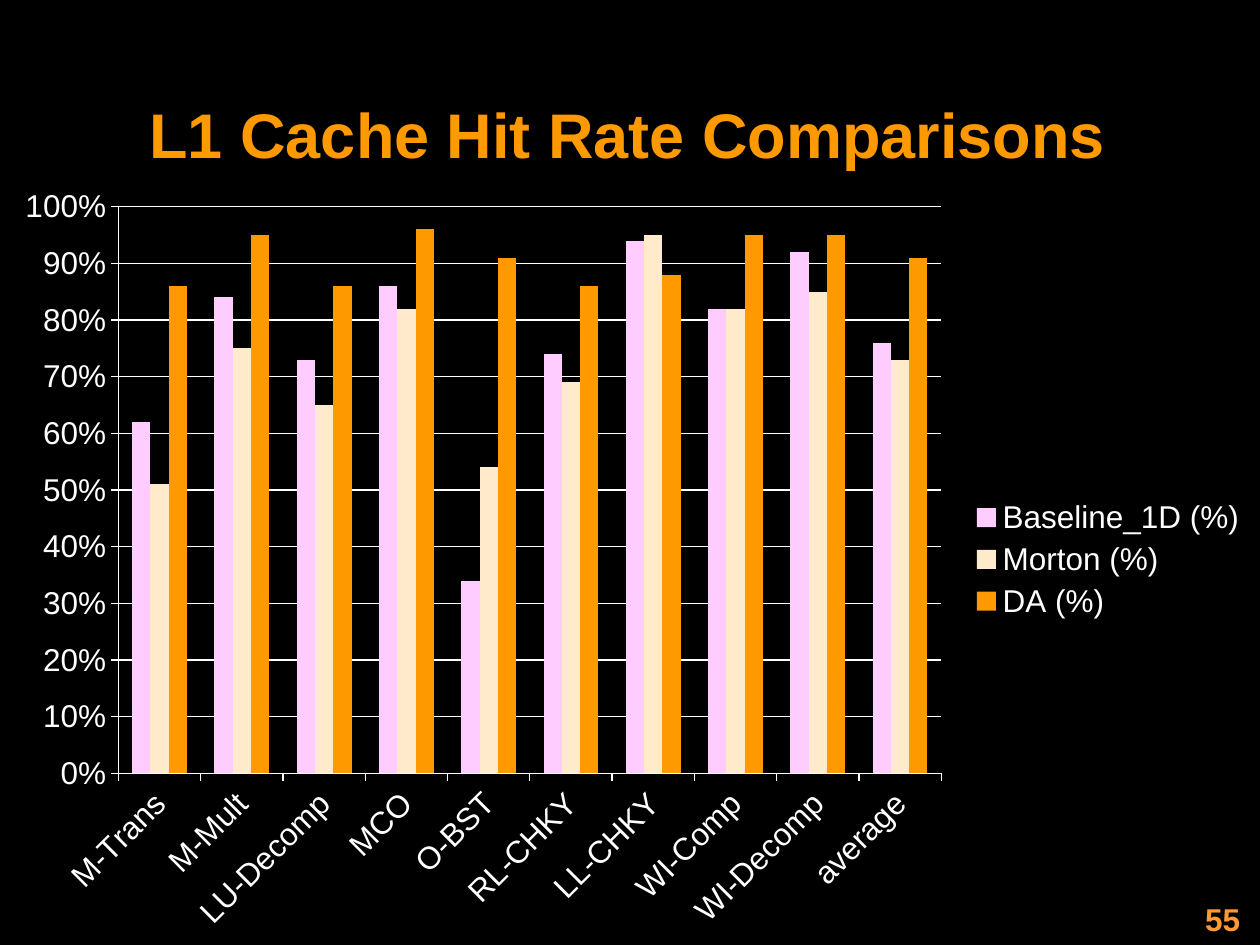
from lxml.etree import SubElement
from pptx import Presentation
from pptx.chart.data import CategoryChartData
from pptx.dml.color import RGBColor
from pptx.enum.chart import XL_CHART_TYPE, XL_LEGEND_POSITION, XL_TICK_MARK
from pptx.enum.text import MSO_ANCHOR, PP_ALIGN
from pptx.oxml.ns import qn
from pptx.util import Inches, Pt

FONT = "Arial"
COLORS = {
    "background": "000000", "text": "FFFFFF", "title": "FF9900", "number": "FF9933",
    "baseline": "FFCCFF", "morton": "FFEBCC", "da": "FF9900",
}
TITLE = "L1 Cache Hit Rate Comparisons"
PAGE_NUMBER = "55"
BENCHMARKS = ["M-Trans", "M-Mult", "LU-Decomp", "MCO", "O-BST",
              "RL-CHKY", "LL-CHKY", "WI-Comp", "WI-Decomp", "average"]
SERIES = [
    ("Baseline_1D (%)", "baseline",
     [0.62, 0.84, 0.73, 0.86, 0.34, 0.74, 0.94, 0.82, 0.92, 0.76]),
    ("Morton (%)", "morton",
     [0.51, 0.75, 0.65, 0.82, 0.54, 0.69, 0.95, 0.82, 0.85, 0.73]),
    ("DA (%)", "da",
     [0.86, 0.95, 0.86, 0.96, 0.91, 0.86, 0.88, 0.95, 0.95, 0.91]),
]
CHART_BOX = (0, 1.38, 10, 6.12)
PLOT_BOX = (0.94, 0.26, 6.53, 4.5)  # inches, from the chart's corner


def rgb(name):
    return RGBColor.from_string(COLORS[name])


def add_text(slide, text, box, *, size, color, align, anchor=MSO_ANCHOR.TOP):
    tf = slide.shapes.add_textbox(*map(Inches, box)).text_frame
    tf.word_wrap = True
    tf.vertical_anchor = anchor
    p = tf.paragraphs[0]
    p.alignment = align
    r = p.add_run()
    r.text = text
    r.font.name, r.font.size, r.font.bold = FONT, Pt(size), True
    r.font.color.rgb = rgb(color)


def place_plot_area(chart, plot_box, chart_size):
    """Fix the inner plot area, without the axis labels."""
    plot_area = chart._chartSpace.chart.plotArea
    layout = plot_area.find(qn("c:layout"))
    if layout is None:
        layout = SubElement(plot_area, qn("c:layout"))
        plot_area.insert(0, layout)
    manual = SubElement(layout, qn("c:manualLayout"))
    settings = {"layoutTarget": "inner", "xMode": "edge", "yMode": "edge"}
    for tag, length, whole in zip("xywh", plot_box, chart_size * 2):
        settings[tag] = length / whole
    for tag, value in settings.items():
        SubElement(manual, qn(f"c:{tag}")).set("val", str(value))


def add_hit_rate_chart(slide, box):
    data = CategoryChartData(number_format="0%")
    data.categories = BENCHMARKS
    for name, _, values in SERIES:
        data.add_series(name, values)
    chart = slide.shapes.add_chart(
        XL_CHART_TYPE.COLUMN_CLUSTERED, *map(Inches, box), data).chart
    chart.has_title = False
    chart.font.name, chart.font.size = FONT, Pt(18)
    chart.font.color.rgb = rgb("text")

    plot = chart.plots[0]
    plot.gap_width, plot.overlap, plot.vary_by_categories = 150, 0, False
    for series, (_, color, _) in zip(plot.series, SERIES):
        series.format.fill.solid()
        series.format.fill.fore_color.rgb = rgb(color)

    rates = chart.value_axis
    rates.minimum_scale, rates.maximum_scale, rates.major_unit = 0, 1, 0.1
    rates.has_major_gridlines = True
    rates.tick_labels.number_format = "0%"
    rates.tick_labels.number_format_is_linked = False
    benchmarks = chart.category_axis
    benchmarks.tick_labels.font.size = Pt(18)
    benchmarks._element.txPr.bodyPr.set("rot", str(-45 * 60000))
    for axis in (rates, benchmarks):
        axis.major_tick_mark = XL_TICK_MARK.OUTSIDE
    for part in (rates, benchmarks, rates.major_gridlines):
        part.format.line.color.rgb = rgb("text")
        part.format.line.width = Pt(0.75)

    chart.has_legend = True
    chart.legend.position = XL_LEGEND_POSITION.RIGHT
    chart.legend.include_in_layout = False
    place_plot_area(chart, PLOT_BOX, box[2:])


def main():
    prs = Presentation()
    prs.slide_width, prs.slide_height = Inches(10), Inches(7.5)
    s = prs.slides.add_slide(prs.slide_layouts[6])
    s.background.fill.solid()
    s.background.fill.fore_color.rgb = rgb("background")
    add_text(s, TITLE, (0.35, 0.59, 9.26, 0.93), size=36, color="title",
             align=PP_ALIGN.CENTER, anchor=MSO_ANCHOR.MIDDLE)
    add_hit_rate_chart(s, CHART_BOX)
    add_text(s, PAGE_NUMBER, (7.86, 7.09, 2.08, 0.5), size=18, color="number",
             align=PP_ALIGN.RIGHT)
    prs.save("out.pptx")


if __name__ == "__main__":
    main()
